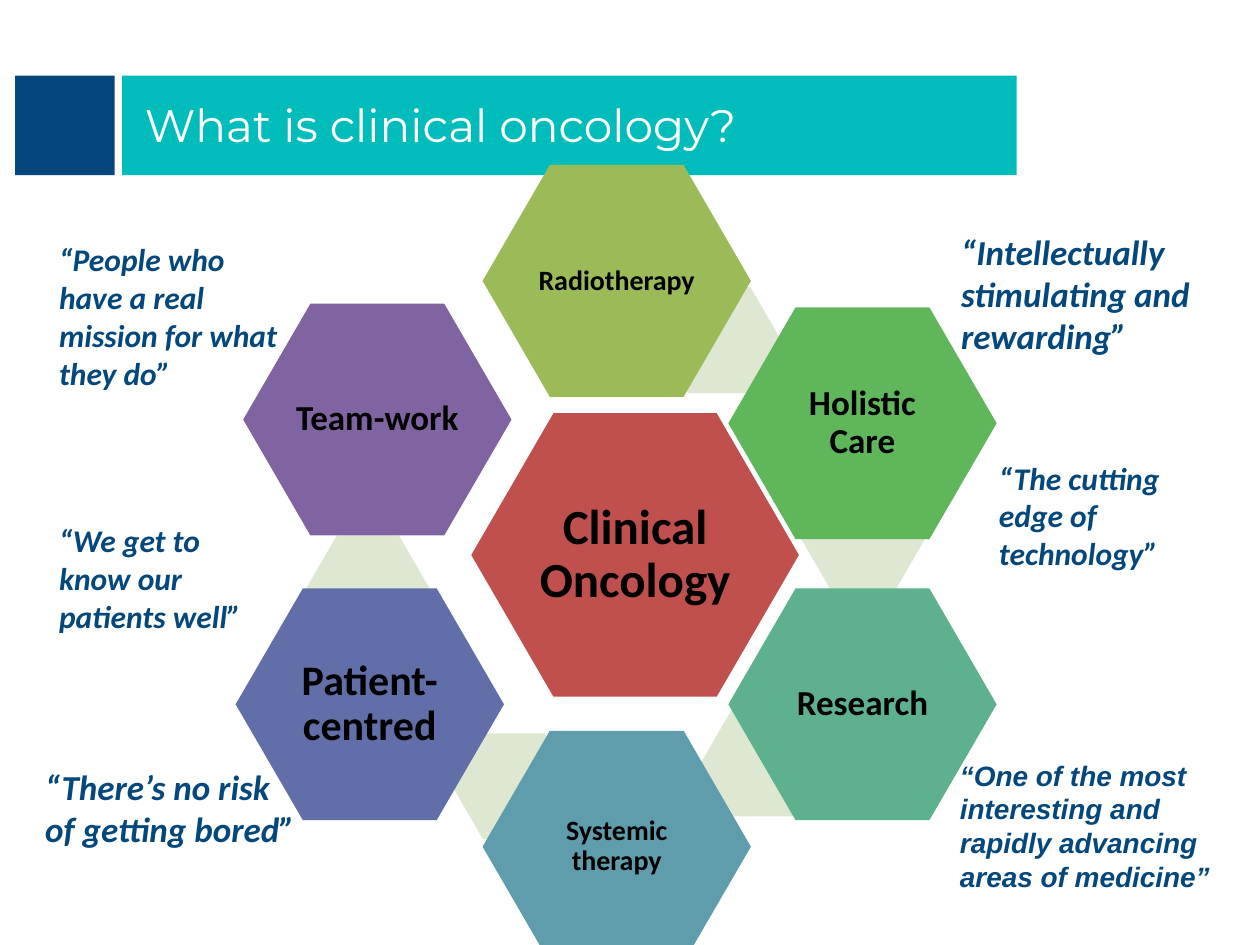
from pptx import Presentation
from pptx.dml.color import RGBColor
from pptx.enum.shapes import MSO_SHAPE
from pptx.enum.text import MSO_ANCHOR, MSO_AUTO_SIZE, PP_ALIGN
from pptx.util import Inches, Pt

RECT, HEXAGON = MSO_SHAPE.RECTANGLE, MSO_SHAPE.HEXAGON
MIDDLE = MSO_ANCHOR.MIDDLE
LEFT, CENTER = PP_ALIGN.LEFT, PP_ALIGN.CENTER
FIT_SHAPE = MSO_AUTO_SIZE.SHAPE_TO_FIT_TEXT

SLIDE = (0, 0, 10, 7.5)
NAVY, TEAL, PALE, BLACK, WHITE = "03477D", "00BDBB", "DEE7D1", "000000", "FFFFFF"

# Sizes in percent of the ring's box
CORE, TILE, LINK = (43.05, 35.55), (35.26, 29.07), (16.23, 13.27)

# Left and top in percent of the ring's box, size, colour, label, text size
RING = [
    (30.96, 31.12, CORE, "C0504D", "Clinical Oncology", 28),
    (55.46, 15.32, LINK, PALE, None, None),
    (32.45, 0, TILE, "9BBB59", "Radiotherapy", 16),
    (74.34, 40.28, LINK, PALE, None, None),
    (64.74, 17.85, TILE, "5FB65B", "Holistic Care", 20),
    (61.09, 68.4, LINK, PALE, None, None),
    (64.74, 53.08, TILE, "5DB18E", "Research", 20),
    (28.48, 71.25, LINK, PALE, None, None),
    (32.45, 70.93, TILE, "5F9DAC", "Systemic therapy", 16),
    (9.27, 46.45, LINK, PALE, None, None),
    (0, 53.08, TILE, "626EA7", "Patient-centred", 24),
    (0.99, 17.38, TILE, "8064A2", "Team-work", 20),
]

# Place in percent of the slide, text, size, font
QUOTES = [
    ((75.3, 23.73, 21.3, 14.8), "“Intellectually stimulating and rewarding”", 20, "Calibri"),
    ((75.2, 79.6, 22.8, 15.73),
     "“One of the most interesting and rapidly advancing areas of medicine”", 16, "Arial"),
    ((2.6, 80.4, 22.7, 10.27), "“There’s no risk of getting bored”", 20, "Calibri"),
    ((3.7, 24.8, 19.5, 17.47), "“People who have a real mission for what they do”", 18, "Calibri"),
    ((3.7, 54.53, 17.1, 13.47), "“We get to know our patients well”", 18, "Calibri"),
    ((78.3, 47.87, 18.2, 13.47), "“The cutting edge of technology”", 18, "Calibri"),
]


def rgb(value):
    return RGBColor.from_string(value)


def share(box, x, y, w, h):
    """Part of a box, given in percent of its size."""
    left, top, width, height = box
    return (left + width * x / 100, top + height * y / 100,
            width * w / 100, height * h / 100)


def add_block(slide, kind, box, color):
    sp = slide.shapes.add_shape(kind, *map(Inches, box))
    sp.shadow.inherit = False
    sp.fill.solid()
    sp.fill.fore_color.rgb = rgb(color)
    sp.line.fill.background()
    return sp


def set_text(tf, text, size, font, color, align=LEFT, bold=False, italic=False):
    tf.word_wrap = True
    p = tf.paragraphs[0]
    p.text = text
    p.alignment = align
    f = p.runs[0].font
    f.size, f.name, f.bold, f.italic = Pt(size), font, bold, italic
    f.color.rgb = rgb(color)
    return p


def add_header(slide, box):
    left, top, width, height = box
    gap = 0.06
    add_block(slide, RECT, (left, top, height, height), NAVY)
    bar_left = left + height + gap
    add_block(slide, RECT, (bar_left, top, width - height - gap, height), TEAL)
    # Title placeholder, raised above the bars
    title = slide.shapes.title
    title.left, title.top = Inches(bar_left + 0.08), Inches(top - 0.24)
    title.width, title.height = Inches(6.93), Inches(1.26)
    title.text_frame.vertical_anchor = MIDDLE
    set_text(title.text_frame, "What is clinical oncology?", 26, "Montserrat", WHITE)
    slide.shapes._spTree.append(title._element)


def add_label(slide, box, text, size):
    tf = slide.shapes.add_textbox(*map(Inches, box)).text_frame
    tf.margin_left = tf.margin_right = tf.margin_top = tf.margin_bottom = Inches(0.03)
    tf.vertical_anchor = MIDDLE
    p = set_text(tf, text, size, "Calibri", BLACK, CENTER, bold=True)
    p.line_spacing = 0.9


def add_ring(slide, box):
    for x, y, size, color, label, points in RING:
        place = share(box, x, y, *size)
        add_block(slide, HEXAGON, place, color).adjustments[0] = 0.29
        if label:
            # The label takes the middle two thirds of its hexagon
            add_label(slide, share(place, 16.67, 16.67, 66.67, 66.67), label, points)


def add_quotes(slide, box):
    for place, text, size, font in QUOTES:
        sp = slide.shapes.add_textbox(*map(Inches, share(box, *place)))
        set_text(sp.text_frame, text, size, font, NAVY, bold=True, italic=True)
        sp.text_frame.auto_size = FIT_SHAPE


def main():
    prs = Presentation()
    prs.slide_width, prs.slide_height = Inches(SLIDE[2]), Inches(SLIDE[3])
    slide = prs.slides.add_slide(prs.slide_layouts.get_by_name("Title Only"))
    add_header(slide, (0.12, 0.6, 7.95, 0.79))
    add_ring(slide, (1.87, 1.31, 6.04, 6.33))
    add_quotes(slide, SLIDE)
    prs.save("out.pptx")


if __name__ == "__main__":
    main()
